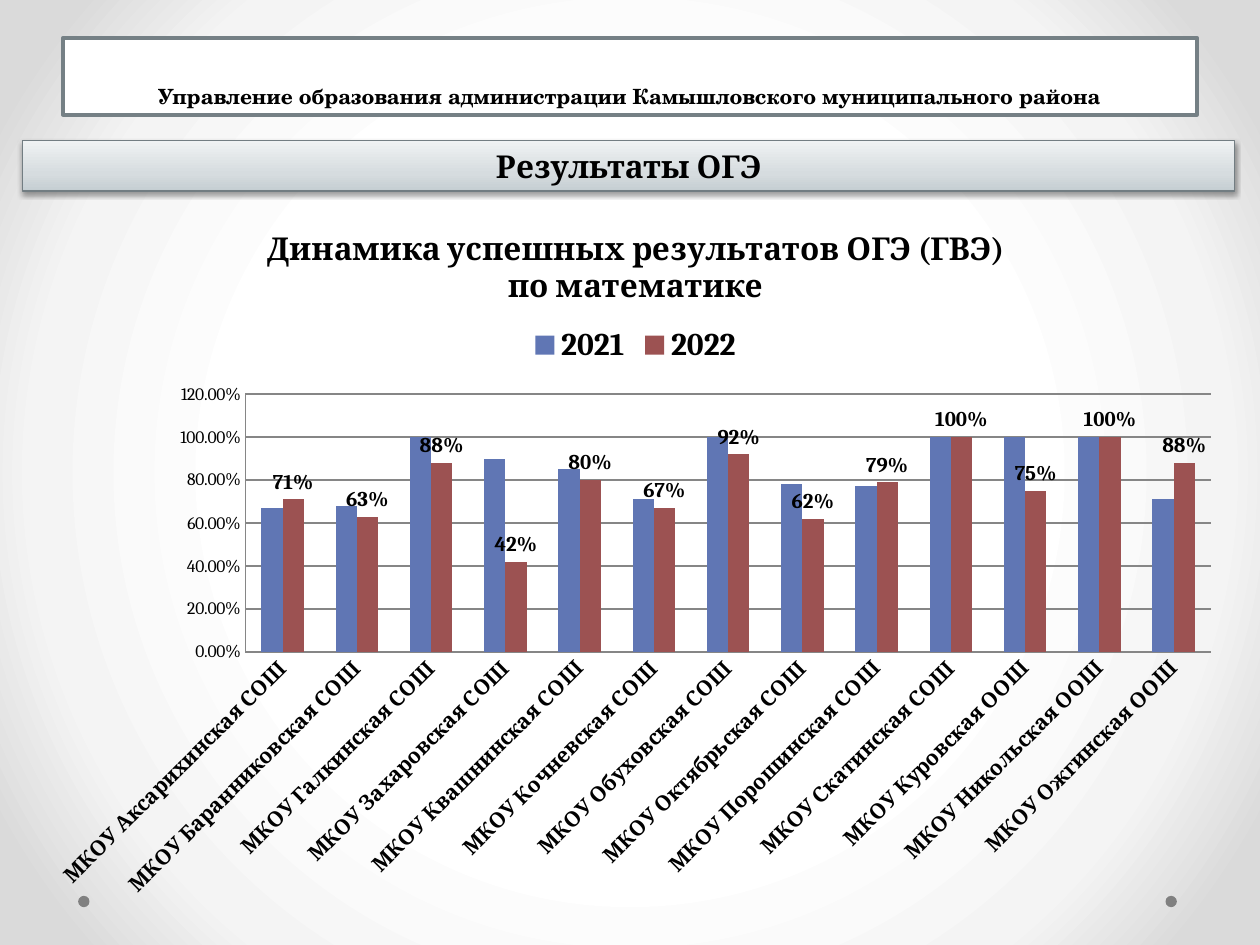
from lxml import etree
from pptx import Presentation
from pptx.chart.data import CategoryChartData
from pptx.dml.color import RGBColor
from pptx.enum.chart import XL_CHART_TYPE, XL_LABEL_POSITION, XL_LEGEND_POSITION, XL_TICK_MARK
from pptx.enum.shapes import MSO_SHAPE
from pptx.enum.text import MSO_ANCHOR, PP_ALIGN
from pptx.oxml import parse_xml
from pptx.util import Inches, Pt

CLUSTERED = XL_CHART_TYPE.COLUMN_CLUSTERED
OUTSIDE_END = XL_LABEL_POSITION.OUTSIDE_END
LEGEND_TOP = XL_LEGEND_POSITION.TOP
NO_TICK = XL_TICK_MARK.NONE
RECT, OVAL = MSO_SHAPE.RECTANGLE, MSO_SHAPE.OVAL
MIDDLE, BOTTOM = MSO_ANCHOR.MIDDLE, MSO_ANCHOR.BOTTOM
CENTER = PP_ALIGN.CENTER
NS = 'xmlns:a="http://schemas.openxmlformats.org/drawingml/2006/main"'
COLORS = {"text": "000000", "white": "FFFFFF", "frame": "758085", "band": "727D82",
          "dot": "808080", "grid": "868686", "2021": "6076B4", "2022": "9C5252"}


def rgb(name):
    return RGBColor.from_string(COLORS[name])


def gradient(stops, direction):
    gs = "".join(f'<a:gs pos="{pos * 1000}"><a:srgbClr val="{c}"/></a:gs>' for pos, c in stops)
    return parse_xml(f'<a:gradFill {NS} rotWithShape="1"><a:gsLst>{gs}</a:gsLst>{direction}</a:gradFill>')


prs = Presentation()
prs.slide_width, prs.slide_height = Inches(10), Inches(7.5)
W, H = prs.slide_width, prs.slide_height
s = prs.slides.add_slide(prs.slide_layouts[5])

s.background.fill.solid()
bg_fill = s.background.fill._xPr.find("{*}solidFill")
bg_fill.getparent().replace(bg_fill, gradient(
    [(50, "FFFFFF"), (76, "F4F4F4"), (92, "DADADA")],
    '<a:path path="circle"><a:fillToRect l="50000" t="50000" r="50000" b="50000"/></a:path>'))

for left in (0.925, 0.062):
    sp = s.shapes.add_shape(OVAL, int(W * left), int(H * 0.948), Inches(0.09), Inches(0.09))
    sp.shadow.inherit = False
    sp.fill.solid()
    sp.fill.fore_color.rgb = rgb("dot")
    sp.line.fill.background()

title = s.shapes.title
title.left, title.top, title.width, title.height = int(W * 0.05), int(H * 0.04), int(W * 0.9), Inches(0.61)
title.fill.solid()
title.fill.fore_color.rgb = rgb("white")
title.line.color.rgb = rgb("frame")
title.line.width = Pt(2.25)
title.text_frame.text = "Управление образования администрации Камышловского муниципального района"
title.text_frame.paragraphs[0].line_spacing = Pt(58)

band = s.shapes.add_shape(RECT, int(W * 0.018), int(H * 0.149), int(W * 0.962), Inches(0.4))
band.fill.background()
no_fill = band._element.spPr.find("{*}noFill")
no_fill.getparent().replace(no_fill, gradient(
    [(0, "C5CED2"), (35, "D6DCDF"), (100, "EFF2F3")], '<a:lin ang="16200000" scaled="0"/>'))
band.line.color.rgb = rgb("band")
band.line.width = Pt(0.75)
band.shadow.inherit = False
effects = band._element.spPr.find("{*}effectLst")
effects.append(parse_xml(
    f'<a:outerShdw {NS} blurRad="{Pt(3.1)}" dist="{Pt(1.6)}" dir="5400000" rotWithShape="0">'
    '<a:srgbClr val="000000"><a:alpha val="38000"/></a:srgbClr></a:outerShdw>'))
band.text_frame.text = "Результаты ОГЭ"

for sp, size, face, anchor in ((title, 12, "TeX Gyre Schola", BOTTOM), (band, 18, "Cambria", MIDDLE)):
    tf = sp.text_frame
    tf.word_wrap = True
    tf.vertical_anchor = anchor
    p = tf.paragraphs[0]
    p.alignment = CENTER
    font = p.runs[0].font
    font.size, font.name, font.bold = Pt(size), face, True
    font.color.rgb = rgb("text")

schools = ["Аксарихинская СОШ", "Баранниковская СОШ", "Галкинская СОШ", "Захаровская СОШ",
           "Квашнинская СОШ", "Кочневская СОШ", "Обуховская СОШ", "Октябрьская СОШ",
           "Порошинская СОШ", "Скатинская СОШ", "Куровская ООШ", "Никольская ООШ", "Ожгинская ООШ"]
results = {
    "2021": [0.67, 0.68, 1, 0.9, 0.85, 0.71, 1, 0.78, 0.77, 1, 1, 1, 0.71],
    "2022": [0.71, 0.63, 0.88, 0.42, 0.8, 0.67, 0.92, 0.62, 0.79, 1, 0.75, 1, 0.88],
}
data = CategoryChartData(number_format="0%")
data.categories = [f"МКОУ {school}" for school in schools]
for year, values in results.items():
    data.add_series(year, values)
chart = s.shapes.add_chart(CLUSTERED, int(W * 0.028), int(H * 0.216),
                           int(W * 0.953), int(H * 0.756), data).chart
chart.font.name, chart.font.size = "Cambria", Pt(10)
chart.font.color.rgb = rgb("text")

chart.has_title = True
tf = chart.chart_title.text_frame
tf.text = "Динамика успешных результатов ОГЭ (ГВЭ)"
tf.add_paragraph().text = "по математике"
for p in tf.paragraphs:
    font = p.runs[0].font
    font.size, font.name, font.bold = Pt(18), "Cambria", True
    font.color.rgb = rgb("text")

chart.has_legend = True
chart.legend.position = LEGEND_TOP
chart.legend.include_in_layout = False
chart.legend.font.size, chart.legend.font.bold = Pt(18), True

cat_axis, val_axis = chart.category_axis, chart.value_axis
for axis in (cat_axis, val_axis):
    axis.major_tick_mark = axis.minor_tick_mark = NO_TICK
    axis.format.line.color.rgb = rgb("grid")
cat_axis.tick_labels.font.size, cat_axis.tick_labels.font.bold = Pt(12), True
cat_axis._element.find("{*}txPr").find("{*}bodyPr").set("rot", "-2700000")
val_axis.minimum_scale, val_axis.maximum_scale, val_axis.major_unit = 0, 1.2, 0.2
val_axis.tick_labels.number_format = "0.00%"
val_axis.tick_labels.number_format_is_linked = False
val_axis.major_gridlines.format.line.color.rgb = rgb("grid")

plot = chart.plots[0]
plot.gap_width, plot.overlap, plot.vary_by_categories = 150, 0, False
for series in plot.series:
    series.format.fill.solid()
    series.format.fill.fore_color.rgb = rgb(series.name)
labels = plot.series[1].data_labels
labels.show_value = True
labels.position = OUTSIDE_END
labels.number_format, labels.number_format_is_linked = "0%", False
labels.font.size, labels.font.bold = Pt(12), True

area = chart._chartSpace.chart.plotArea
for old in area.findall("{*}layout"):
    area.remove(old)
C = "{http://schemas.openxmlformats.org/drawingml/2006/chart}"
layout = etree.Element(C + "layout")
area.insert(0, layout)
manual = etree.SubElement(layout, C + "manualLayout")
for tag, value in (("layoutTarget", "inner"), ("xMode", "edge"), ("yMode", "edge"),
                   ("x", "0.175"), ("y", "0.266"), ("w", "0.804"), ("h", "0.361")):
    etree.SubElement(manual, C + tag).set("val", value)

prs.save("out.pptx")
